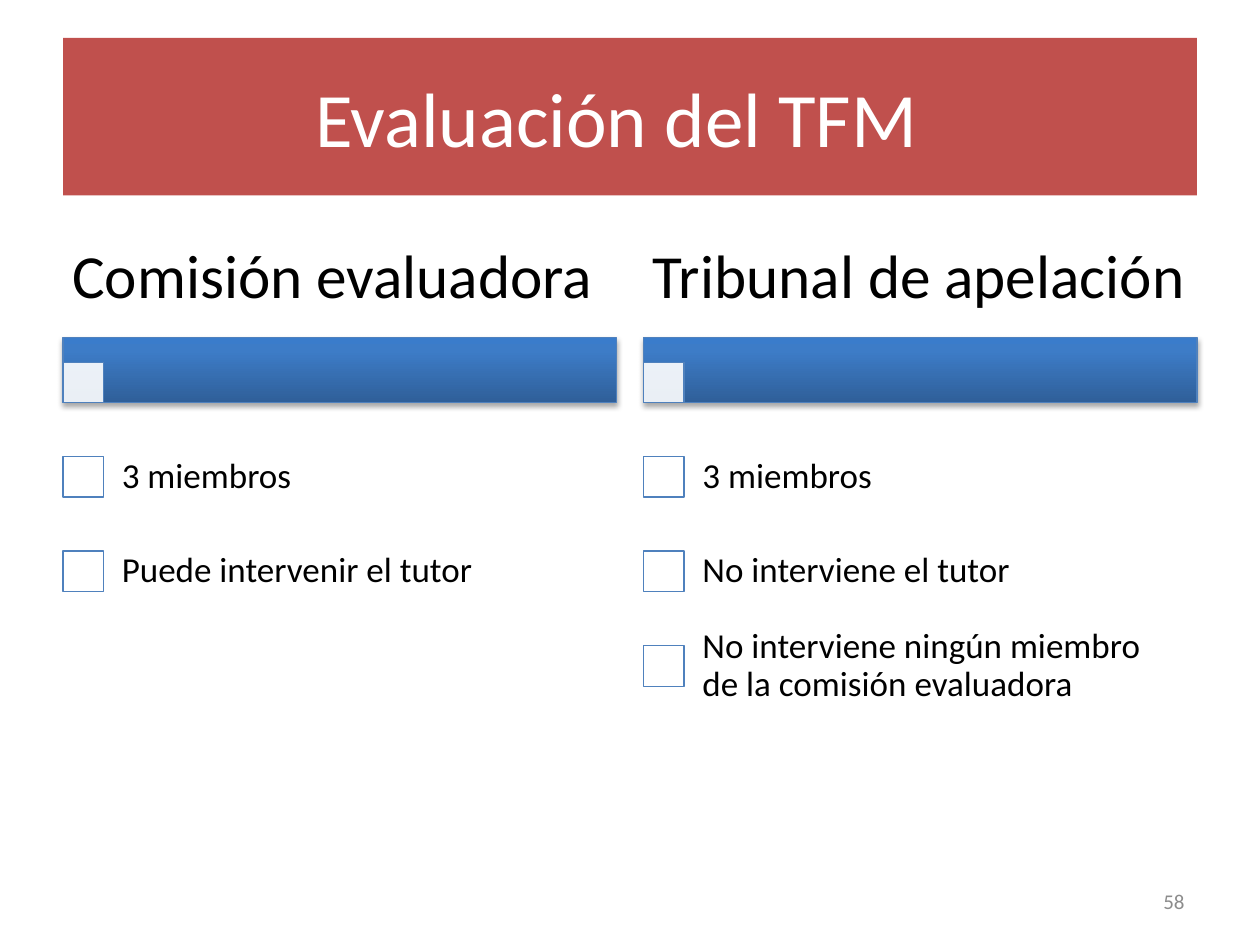
from collections import namedtuple
from dataclasses import dataclass

import pptx
import pptx.dml.color
import pptx.enum.shapes
import pptx.enum.text
import pptx.oxml
import pptx.oxml.ns
import pptx.util

Pt = pptx.util.Pt
Align = pptx.enum.text.PP_ALIGN
Box = namedtuple("Box", "left top width height")
NAMESPACE = pptx.oxml.ns.nsdecls("a")


@dataclass(frozen=True)
class Theme:
    font: str = "Calibri"
    red: str = "C0504D"
    blue: str = "4F81BD"
    white: str = "FFFFFF"
    black: str = "000000"
    gray: str = "8C8C8C"
    bar_stops: tuple = ((0, "2F5F99"), (80, "3D7CC7"), (100, "3A7CCB"))
    title_size: float = 44
    heading_size: float = 35
    item_size: float = 20
    number_size: float = 12
    line_width: float = 0.75


THEME = Theme()
COLUMNS = (
    ("Comisión evaluadora", ("3 miembros", "Puede intervenir el tutor")),
    ("Tribunal de apelación", (
        "3 miembros",
        "No interviene el tutor",
        "No interviene ningún miembro de la comisión evaluadora",
    )),
)


def rgb(color):
    return pptx.dml.color.RGBColor.from_string(color)


def in_points(box):
    return [Pt(length) for length in box]


def write(shape, text, size, color, align, insets=(7.2, 3.6), spacing=1.0):
    frame = shape.text_frame
    frame.word_wrap = True
    frame.auto_size = pptx.enum.text.MSO_AUTO_SIZE.NONE
    frame.vertical_anchor = pptx.enum.text.MSO_ANCHOR.MIDDLE
    frame.margin_left = frame.margin_right = Pt(insets[0])
    frame.margin_top = frame.margin_bottom = Pt(insets[1])
    para = frame.paragraphs[0]
    para.text = text
    para.alignment = align
    para.line_spacing = spacing
    para.font.name = THEME.font
    para.font.size = Pt(size)
    para.font.color.rgb = rgb(color)


def add_label(shapes, box, *style, **layout):
    write(shapes.add_textbox(*in_points(box)), *style, **layout)


def add_rectangle(shapes, box):
    shape = shapes.add_shape(
        pptx.enum.shapes.MSO_SHAPE.RECTANGLE, *in_points(box))
    shape.shadow.inherit = False
    shape.fill.solid()
    shape.fill.fore_color.rgb = rgb(THEME.white)
    shape.line.color.rgb = rgb(THEME.blue)
    shape.line.width = Pt(THEME.line_width)
    return shape


def add_bar(shapes, box):
    bar = add_rectangle(shapes, box)
    bar.fill.gradient()
    bar.fill.gradient_angle = 90
    stops = bar.element.spPr.find(".//" + pptx.oxml.ns.qn("a:gsLst"))
    for stop in list(stops):
        stops.remove(stop)
    for position, color in THEME.bar_stops:
        stops.append(pptx.oxml.parse_xml(
            f'<a:gs {NAMESPACE} pos="{position * 1000}">'
            f'<a:srgbClr val="{color}"/></a:gs>'))
    effects = bar.element.spPr.find(pptx.oxml.ns.qn("a:effectLst"))
    effects.append(pptx.oxml.parse_xml(
        f'<a:outerShdw {NAMESPACE} blurRad="{Pt(3.1)}" dist="{Pt(1.8)}" '
        f'dir="5400000" rotWithShape="0"><a:srgbClr val="{THEME.black}">'
        '<a:alpha val="35000"/></a:srgbClr></a:outerShdw>'))


def add_square(shapes, left, top, opacity=100):
    square = add_rectangle(shapes, Box(left, top, 23.2, 23.2))
    if opacity < 100:
        color = square.element.spPr.find(
            pptx.oxml.ns.qn("a:solidFill") + "/" + pptx.oxml.ns.qn("a:srgbClr"))
        color.append(pptx.oxml.parse_xml(
            f'<a:alpha {NAMESPACE} val="{opacity * 1000}"/>'))


def add_column(shapes, box, heading, items):
    heading_height, bar_height, row_height, indent = 67, 37.2, 54.1, 22.1
    bar_top = box.top + heading_height
    add_bar(shapes, Box(box.left, bar_top, box.width, bar_height))
    add_square(shapes, box.left, bar_top + 14, opacity=90)
    add_label(shapes, Box(box.left, box.top, box.width, heading_height),
              heading, THEME.heading_size, THEME.black, Align.LEFT,
              insets=(5.3, 3.5), spacing=0.9)
    for index, item in enumerate(items):
        row_top = box.top + 119.4 + index * row_height
        add_square(shapes, box.left, row_top + (row_height - 23.2) / 2)
        add_label(
            shapes,
            Box(box.left + indent, row_top, box.width - indent, row_height),
            item, THEME.item_size, THEME.black, Align.LEFT,
            insets=(11.5, 11.5), spacing=0.9)


def add_columns(page, box):
    group = page.shapes.add_group_shape()
    gap = 15.6
    width = (box.width - gap) / len(COLUMNS)
    for index, (heading, items) in enumerate(COLUMNS):
        left = box.left + index * (width + gap)
        add_column(group.shapes, Box(left, box.top, width, box.height),
                   heading, items)


def format_title(page, box, text):
    title = page.shapes.title
    title.left, title.top, title.width, title.height = in_points(box)
    title.fill.solid()
    title.fill.fore_color.rgb = rgb(THEME.red)
    write(title, text, THEME.title_size, THEME.white, Align.CENTER)


def main():
    deck = pptx.Presentation()
    deck.slide_width, deck.slide_height = Pt(720), Pt(540)
    page = deck.slides.add_slide(deck.slide_layouts.get_by_name("Title Only"))
    format_title(page, Box(36, 21.6, 648, 90), "Evaluación del TFM\t")
    add_columns(page, Box(36, 126, 648, 282))
    add_label(page.shapes, Box(516, 500.5, 168, 28.8),
              "58", THEME.number_size, THEME.gray, Align.RIGHT)
    deck.save("out.pptx")


if __name__ == "__main__":
    main()
